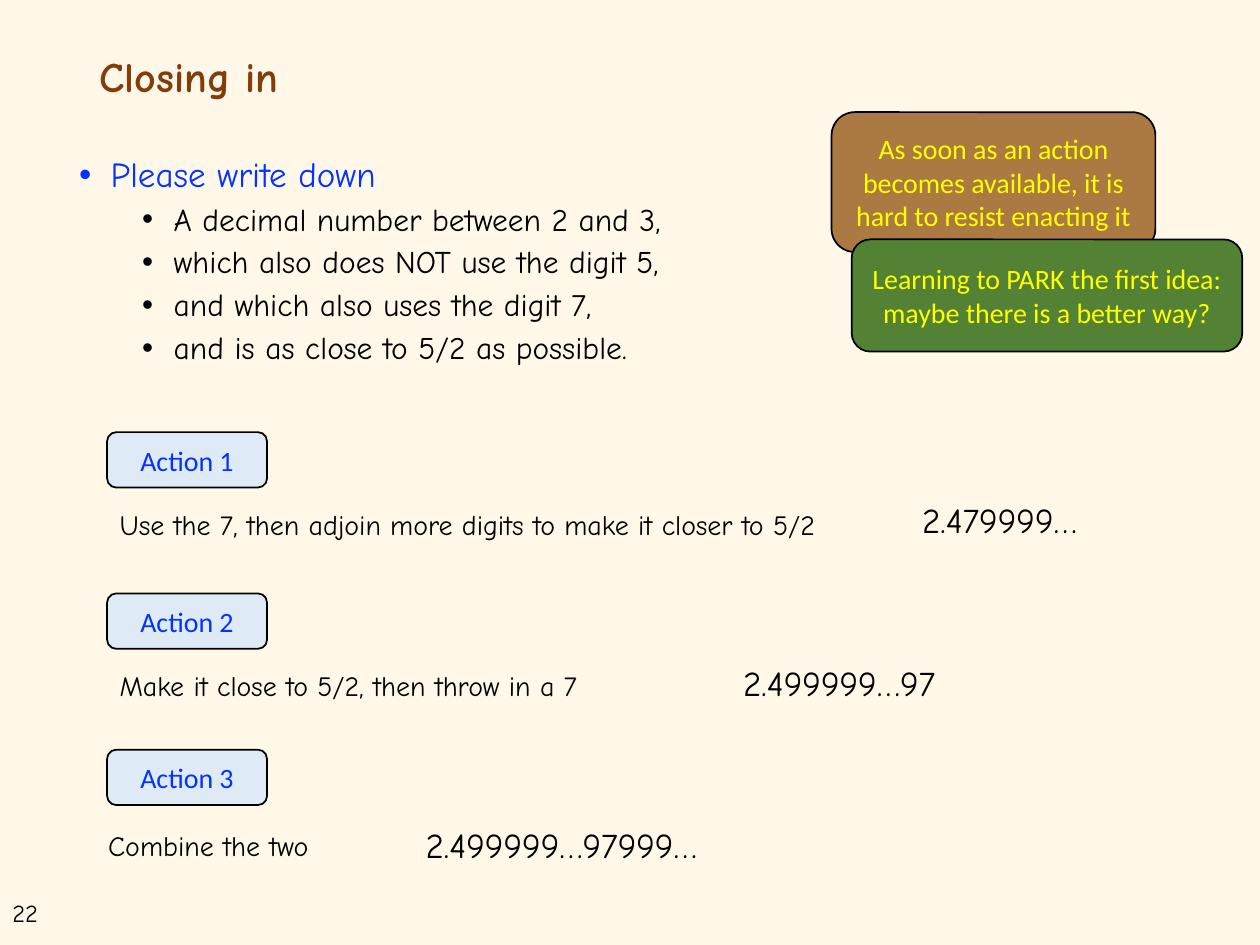
import pptx
import pptx.dml.color
import pptx.enum.shapes
import pptx.enum.text
import pptx.oxml.ns
import pptx.util
import lxml.etree

Inches = pptx.util.Inches
Pt = pptx.util.Pt
RGBColor = pptx.dml.color.RGBColor
Align = pptx.enum.text.PP_ALIGN
Anchor = pptx.enum.text.MSO_ANCHOR
qn = pptx.oxml.ns.qn

CREAM = RGBColor(0xFF, 0xF8, 0xE9)
BLACK = RGBColor(0x00, 0x00, 0x00)
BROWN = RGBColor(0x84, 0x3C, 0x0B)
BLUE = RGBColor(0x04, 0x32, 0xFF)
PALE = RGBColor(0xDE, 0xEB, 0xF7)
TAN = RGBColor(0xAB, 0x79, 0x42)
GREEN = RGBColor(0x54, 0x82, 0x35)
YELLOW = RGBColor(0xFF, 0xFF, 0x00)
COMIC = "Comic Neue"


def add_text(para, text, size=16, color=BLACK, font=COMIC, bold=False,
             align=Align.LEFT, line=1.0):
    para.text = text
    para.alignment = align
    para.line_spacing = line
    for run in para.runs:
        run.font.size = Pt(size)
        run.font.name = font
        run.font.bold = bold
        run.font.color.rgb = color


def add_box(left, top, width, height, text, fill=None, wrap=True, **style):
    """Add a text box, or a rounded box with centred text if fill is given."""
    area = [Inches(n) for n in (left, top, width, height)]
    if fill is None:
        box = slide.shapes.add_textbox(*area)
    else:
        kind = pptx.enum.shapes.MSO_SHAPE.ROUNDED_RECTANGLE
        box = slide.shapes.add_shape(kind, *area)
        box.shadow.inherit = False
        box.fill.solid()
        box.fill.fore_color.rgb = fill
        box.line.color.rgb = BLACK
        box.line.width = Pt(1)
        box.text_frame.vertical_anchor = Anchor.MIDDLE
        style.update(font="Calibri", align=Align.CENTER)
    frame = box.text_frame
    frame.word_wrap = wrap
    add_text(frame.paragraphs[0], text, **style)
    return frame


deck = pptx.Presentation()
deck.slide_width = Inches(10)
deck.slide_height = Inches(7.5)
slide = deck.slides.add_slide(deck.slide_layouts[6])
slide.background.fill.solid()
slide.background.fill.fore_color.rgb = CREAM

add_box(0, 7.08, 0.53, 0.34, "22", size=14)
add_box(0.69, 0.4, 8.62, 0.5, "Closing in", size=24, color=BROWN, bold=True, line=0.9)

# Task list
task = add_box(0.53, 1.2, 5.28, 1.79, "Please write down", size=20, color=BLUE, line=0.9)
rules = [
    "A decimal number between 2 and 3,",
    "which also does NOT use the digit 5,",
    "and which also uses the digit 7,",
    "and is as close to 5/2 as possible.",
]
for rule in rules:
    add_text(task.add_paragraph(), rule, size=18, line=0.9)
for index, para in enumerate(task.paragraphs):
    para.level = min(index, 1)
    para.space_before = Pt(5 if index else 10)
    props = para._p.get_or_add_pPr()
    props.set("marL", str(Inches(0.75 if index else 0.25)))
    props.set("indent", str(Inches(-0.25)))
    lxml.etree.SubElement(props, qn("a:buFont"), typeface="Arial")
    lxml.etree.SubElement(props, qn("a:buChar"), char="•")

# Actions: label top, then left, top and width of the step and of its result
actions = [
    (3.43, "Use the 7, then adjoin more digits to make it closer to 5/2",
     (0.85, 3.98, 6.18), "2.479999…", (7.22, 3.91, 1.6)),
    (4.71, "Make it close to 5/2, then throw in a 7",
     (0.85, 5.26, 4.21), "2.499999…97", (5.8, 5.2, 1.93)),
    (5.95, "Combine the two",
     (0.76, 6.53, 1.92), "2.499999…97999…", (3.28, 6.49, 2.62)),
]
for number, (top, step, place, result, spot) in enumerate(actions, 1):
    add_box(0.85, top, 1.27, 0.44, f"Action {number}", fill=PALE, color=BLUE)
    add_box(*place, 0.37, step, wrap=False)
    add_box(*spot, 0.44, result, wrap=False, size=20)

# Remarks
add_box(6.6, 0.89, 2.57, 1.11,
        "As soon as an action becomes available, it is hard to resist enacting it",
        fill=TAN, color=YELLOW)
add_box(6.76, 1.9, 3.1, 0.89,
        "Learning to PARK the first idea:\vmaybe there is a better way?",
        fill=GREEN, color=YELLOW)

deck.save("out.pptx")
